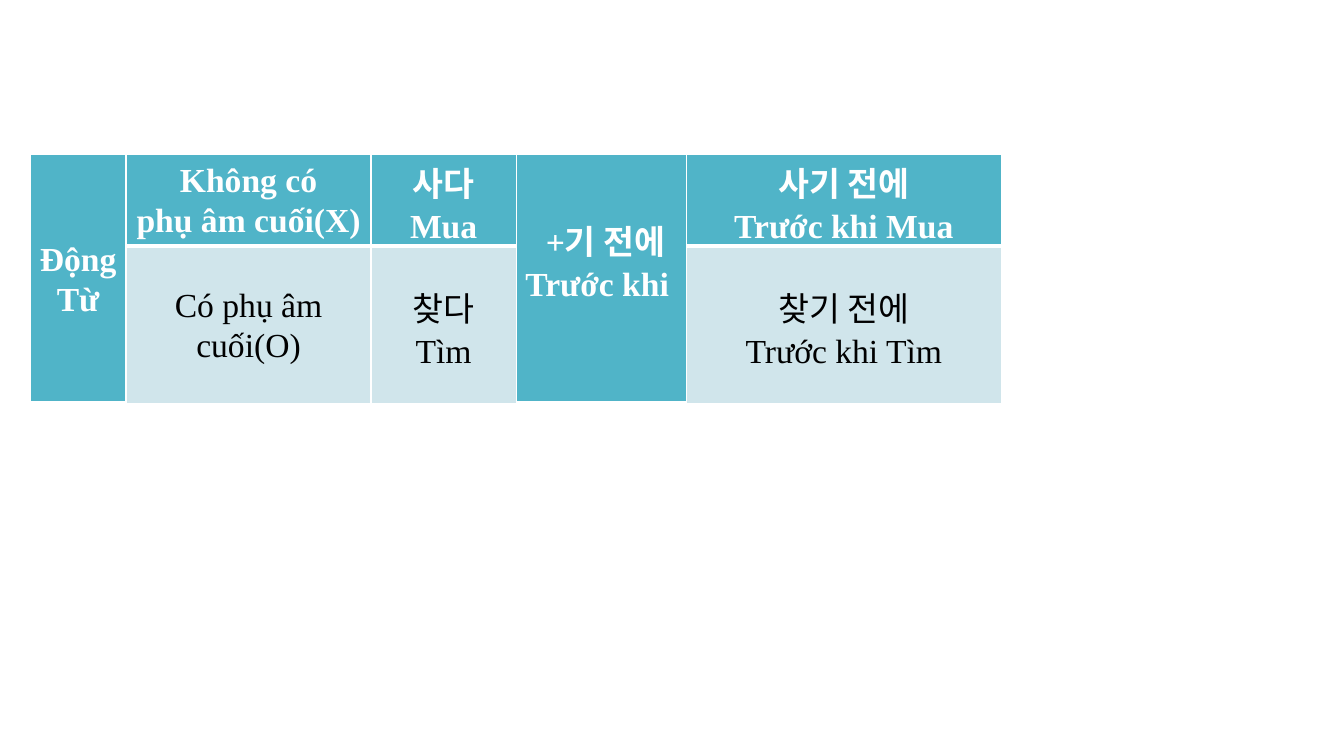
from dataclasses import dataclass

from lxml import etree
from pptx import Presentation
from pptx.dml.color import RGBColor as RGB
from pptx.enum.text import MSO_ANCHOR, PP_ALIGN
from pptx.oxml.ns import qn
from pptx.util import Inches, Pt


@dataclass(frozen=True)
class Theme:
    font: str = "Times New Roman"
    size: int = 24
    spacing: float = 1.07
    inset: float = 0.07
    header_fill: str = "50B4C8"
    body_fill: str = "D0E5EB"
    header_text: str = "FFFFFF"
    body_text: str = "000000"
    border: str = "FFFFFF"
    thin: int = 1
    thick: int = 3


THEME = Theme()
COLUMNS = [0.95, 2.43, 1.44, 1.69, 3.12]
ROWS = [0.9, 1.56]
LEFT, TOP = 0.3, 1.53
MERGED_COLUMNS = (0, 3)
SUFFIX_COLUMN = 3
SUFFIX_LIFT = 0.41  # one line of text

# Lines of each cell; merged cells are empty in the second row
CELLS = [
    [["Động Từ"], ["Không có", "phụ âm cuối(X)"], ["사다", "Mua"],
     ["\u00a0+기 전에".replace("\u00a0", " "), "Trước khi "],
     ["사기 전에", "Trước khi Mua"]],
    [[], ["Có phụ âm cuối(O)"], ["찾다", "Tìm"], [],
     ["찾기 전에", "Trước khi Tìm"]],
]


def set_borders(cell, top, bottom):
    """Draw the four edges of a cell; widths are in points."""
    props = cell._tc.get_or_add_tcPr()
    edges = {"L": THEME.thin, "R": THEME.thin, "T": top, "B": bottom}
    for i, (side, width) in enumerate(edges.items()):
        line = etree.Element(qn(f"a:ln{side}"), w=str(Pt(width)))
        fill = etree.SubElement(line, qn("a:solidFill"))
        etree.SubElement(fill, qn("a:srgbClr"), val=THEME.border)
        props.insert(i, line)


def write_lines(cell, lines, color, bold):
    tf = cell.text_frame
    for i, line in enumerate(lines):
        p = tf.add_paragraph() if i else tf.paragraphs[0]
        p.alignment = PP_ALIGN.CENTER
        p.line_spacing = THEME.spacing
        r = p.add_run()
        r.text = line
        r.font.name = THEME.font
        r.font.size = Pt(THEME.size)
        r.font.bold = bold
        r.font.color.rgb = RGB.from_string(color)


def style_cell(cell, lines, header):
    cell.fill.solid()
    fill = THEME.header_fill if header else THEME.body_fill
    cell.fill.fore_color.rgb = RGB.from_string(fill)
    cell.vertical_anchor = MSO_ANCHOR.MIDDLE
    cell.margin_left = cell.margin_right = Inches(THEME.inset)
    cell.margin_top = cell.margin_bottom = 0
    color = THEME.header_text if header else THEME.body_text
    write_lines(cell, lines, color, header)
    if header:
        set_borders(cell, THEME.thin, THEME.thick)
    else:
        set_borders(cell, THEME.thick, THEME.thin)


def add_grammar_table(slide):
    frame = slide.shapes.add_table(
        len(ROWS), len(COLUMNS), Inches(LEFT), Inches(TOP),
        Inches(sum(COLUMNS)), Inches(sum(ROWS)))
    table = frame.table
    for column, width in zip(table.columns, COLUMNS):
        column.width = Inches(width)
    for row, height in zip(table.rows, ROWS):
        row.height = Inches(height)
    for c in MERGED_COLUMNS:
        table.cell(0, c).merge(table.cell(1, c))
    for r, row_lines in enumerate(CELLS):
        for c, lines in enumerate(row_lines):
            cell = table.cell(r, c)
            if not cell.is_spanned:
                style_cell(cell, lines, header=r == 0)
    # The suffix sits above the middle of its merged cell
    table.cell(0, SUFFIX_COLUMN).margin_bottom = Inches(SUFFIX_LIFT)


def main():
    prs = Presentation()
    prs.slide_width, prs.slide_height = Inches(13.33), Inches(7.5)
    slide = prs.slides.add_slide(prs.slide_layouts[6])
    add_grammar_table(slide)
    prs.save("out.pptx")


if __name__ == "__main__":
    main()
